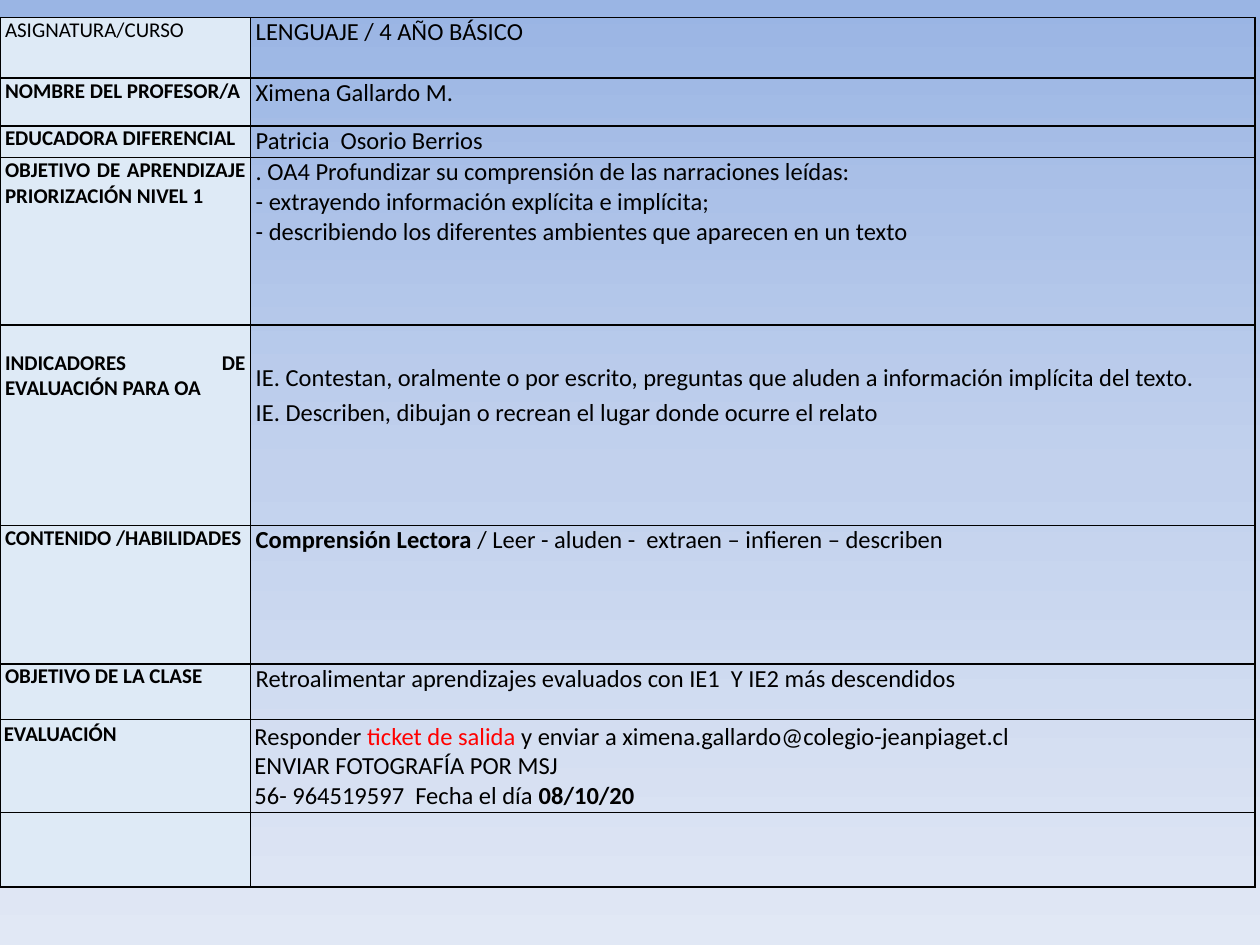
from dataclasses import dataclass

import lxml.etree
import pptx
import pptx.dml.color
import pptx.enum.text
import pptx.oxml
import pptx.oxml.ns
import pptx.util

COLORS = {
    "text": "000000", "border": "000000", "label": "DEEAF6", "accent": "FF0000",
    "sky": "9AB5E4", "mist": "C2D1ED", "haze": "E1E8F5",
}
FONT = "Calibri"
LABEL_SIZE, DETAIL_SIZE = 12, 14
COLUMN_WIDTHS = (1.99, 7.97)
TABLE_TOP = 0.14
NS = pptx.oxml.ns.nsdecls("a", "p")
JUSTIFY = pptx.enum.text.PP_ALIGN.JUSTIFY
LEFT = pptx.enum.text.PP_ALIGN.LEFT


@dataclass(frozen=True)
class Span:
    text: str
    bold: bool = False
    color: str = "text"


@dataclass(frozen=True)
class PlanRow:
    height: float
    label: str = ""
    details: tuple[tuple[Span, ...], ...] = ()
    label_bold: bool = True
    align: pptx.enum.text.PP_ALIGN = JUSTIFY
    line_spacing: float = 1.0
    side_margin: float = 0.04
    label_top: float = 0
    detail_top: float = 0


def lines(*texts: str) -> tuple[tuple[Span, ...], ...]:
    """Plain paragraphs of one span each."""
    return tuple((Span(text),) for text in texts)


PLAN = (
    PlanRow(0.48, "ASIGNATURA/CURSO", lines("LENGUAJE / 4 AÑO BÁSICO"), label_bold=False),
    PlanRow(0.38, "NOMBRE DEL PROFESOR/A", lines("Ximena Gallardo M.")),
    PlanRow(0.25, "EDUCADORA DIFERENCIAL", lines("Patricia  Osorio Berrios")),
    PlanRow(1.33, "OBJETIVO DE APRENDIZAJE PRIORIZACIÓN NIVEL 1", lines(
        ". OA4 Profundizar su comprensión de las narraciones leídas:",
        "- extrayendo información explícita e implícita;",
        "- describiendo los diferentes ambientes que aparecen en un texto")),
    PlanRow(1.59, "INDICADORES DE EVALUACIÓN PARA OA", lines(
        "IE. Contestan, oralmente o por escrito, preguntas que aluden a "
        "información implícita del texto.",
        "IE. Describen, dibujan o recrean el lugar donde ocurre el relato"),
        align=LEFT, line_spacing=1.15, label_top=0.2, detail_top=0.27),
    PlanRow(1.1, "CONTENIDO /HABILIDADES", ((
        Span("Comprensión Lectora ", bold=True),
        Span("/ Leer - aluden -  extraen – infieren – describen")),)),
    PlanRow(0.44, "OBJETIVO DE LA CLASE", lines(
        "Retroalimentar aprendizajes evaluados con IE1  Y IE2 más descendidos")),
    PlanRow(0.74, "EVALUACIÓN", (
        (Span("Responder "), Span("ticket de salida ", color="accent"),
         Span("y enviar a ximena.gallardo@colegio-jeanpiaget.cl")),
        (Span("ENVIAR FOTOGRAFÍA POR MSJ"),),
        (Span("56- 964519597  Fecha el día "), Span("08/10/20", bold=True))),
        side_margin=0.03, label_top=0.02, detail_top=0.02),
    PlanRow(0.59),
)


def rgb(name: str) -> pptx.dml.color.RGBColor:
    return pptx.dml.color.RGBColor.from_string(COLORS[name])


def paint_background(slide: pptx.slide.Slide) -> None:
    stops = "".join(
        f'<a:gs pos="{position * 1000}"><a:srgbClr val="{COLORS[name]}"/></a:gs>'
        for position, name in ((0, "sky"), (50, "mist"), (100, "haze")))
    background = pptx.oxml.parse_xml(
        f'<p:bg {NS}><p:bgPr><a:gradFill rotWithShape="1"><a:gsLst>{stops}</a:gsLst>'
        '<a:lin ang="5400000" scaled="0"/></a:gradFill><a:effectLst/></p:bgPr></p:bg>')
    slide.element.cSld.insert(0, background)


def add_borders(cell: pptx.table._Cell) -> None:
    properties = cell._tc.get_or_add_tcPr()
    for side in "LRTB":
        properties.append(pptx.oxml.parse_xml(
            f'<a:ln{side} {NS} w="{pptx.util.Pt(1)}"><a:solidFill>'
            f'<a:srgbClr val="{COLORS["border"]}"/></a:solidFill></a:ln{side}>'))


def write_cell(cell: pptx.table._Cell, paragraphs: tuple[tuple[Span, ...], ...],
               size: float, align: pptx.enum.text.PP_ALIGN,
               line_spacing: float, side: float, top: float) -> None:
    cell.margin_left = cell.margin_right = pptx.util.Inches(side)
    cell.margin_top = pptx.util.Inches(top)
    cell.margin_bottom = 0
    frame = cell.text_frame
    frame.text = "\n".join("" for _ in paragraphs[1:]) + "\n" * (len(paragraphs) > 1)
    for paragraph, spans in zip(frame.paragraphs, paragraphs):
        paragraph.alignment = align
        paragraph.line_spacing = line_spacing
        for span in spans:
            run = paragraph.add_run()
            run.text = span.text
            run.font.name = FONT
            run.font.size = pptx.util.Pt(size)
            run.font.bold = span.bold
            run.font.color.rgb = rgb(span.color)


def add_plan(slide: pptx.slide.Slide) -> None:
    table = slide.shapes.add_table(
        len(PLAN), len(COLUMN_WIDTHS), 0, pptx.util.Inches(TABLE_TOP),
        pptx.util.Inches(sum(COLUMN_WIDTHS)),
        pptx.util.Inches(sum(row.height for row in PLAN))).table
    table.first_row = table.horz_banding = False
    for column, width in zip(table.columns, COLUMN_WIDTHS):
        column.width = pptx.util.Inches(width)
    for index, row in enumerate(PLAN):
        table.rows[index].height = pptx.util.Inches(row.height)
        label, detail = table.cell(index, 0), table.cell(index, 1)
        for cell in (label, detail):
            add_borders(cell)
        label.fill.solid()
        label.fill.fore_color.rgb = rgb("label")
        detail.fill.background()
        if row.label:
            write_cell(label, ((Span(row.label, row.label_bold),),), LABEL_SIZE,
                       JUSTIFY, 1.0, row.side_margin, row.label_top)
            write_cell(detail, row.details, DETAIL_SIZE, row.align,
                       row.line_spacing, row.side_margin, row.detail_top)


def main() -> None:
    deck = pptx.Presentation()
    deck.slide_width = pptx.util.Inches(10)
    deck.slide_height = pptx.util.Inches(7.5)
    slide = deck.slides.add_slide(deck.slide_layouts[6])
    paint_background(slide)
    add_plan(slide)
    deck.save("out.pptx")


if __name__ == "__main__":
    main()
